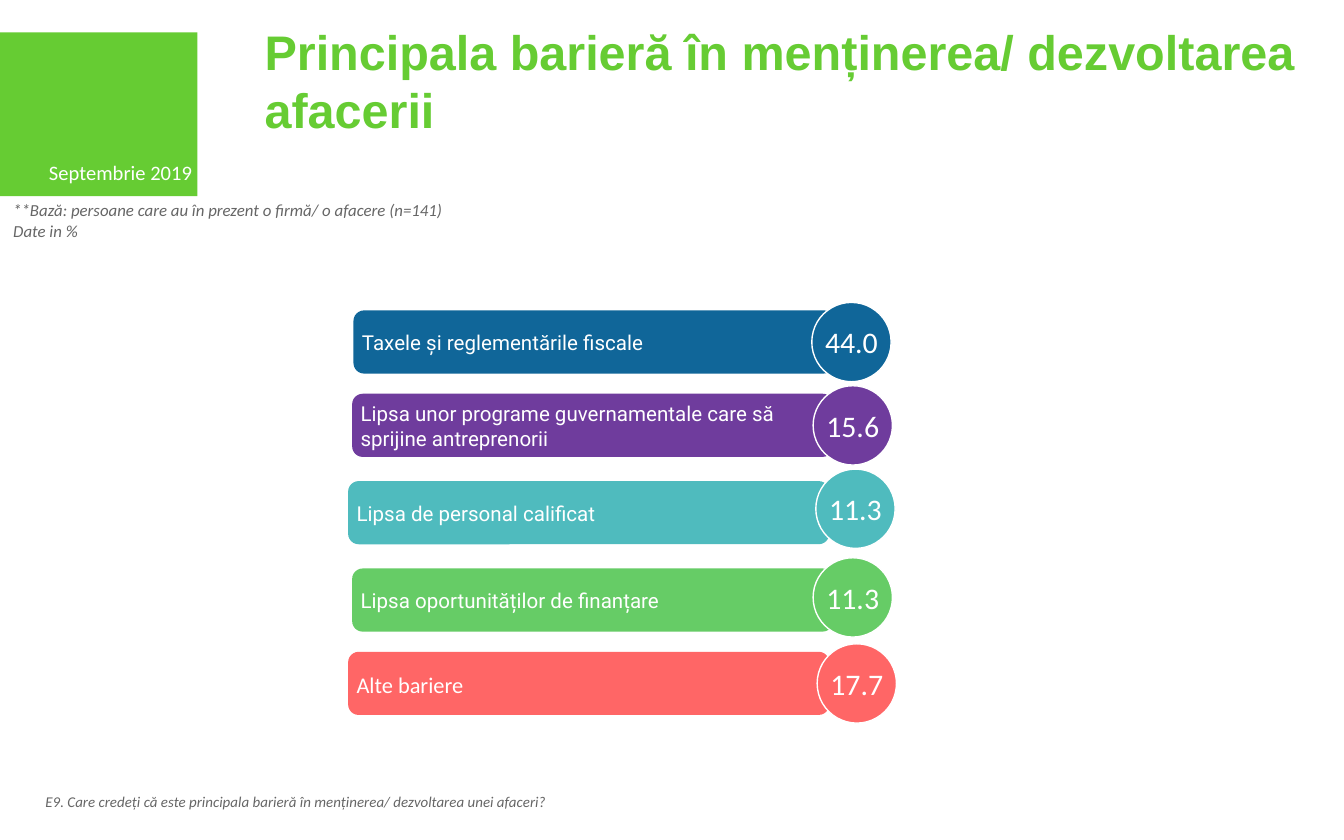
from pptx import Presentation
from pptx.dml.color import RGBColor
from pptx.enum import shapes, text
from pptx.util import Inches, Pt

WHITE, GREEN, GREY = "FFFFFF", "66CC33", "666666"
BAR_WIDTH, BAR_HEIGHT, CIRCLE = 3.58, 0.47, 0.59

# label, value, colour, bar left, bar top, circle left, circle top, size, font
BARRIERS = [
    ("Taxele și reglementările fiscale", "44.0", "106699",
     2.63, 2.31, 6.04, 2.25, 11, "Roboto"),
    ("Lipsa unor programe guvernamentale care să sprijine antreprenorii", "15.6", "6F3C9D",
     2.62, 2.93, 6.05, 2.87, 11, "Roboto"),
    ("Lipsa de personal calificat", "11.3", "4FBBBE",
     2.59, 3.58, 6.07, 3.49, 11, "Roboto"),
    ("Lipsa oportunităților de finanțare", "11.3", "66CC66",
     2.62, 4.23, 6.05, 4.15, 11, "Roboto"),
    ("Alte bariere", "17.7", "FF6666",
     2.59, 4.85, 6.08, 4.79, 12, "Calibri"),
]


def rgb(value):
    return RGBColor.from_string(value)


def write(holder, words, size=11, font="Calibri", color=WHITE, bold=False,
          italic=False, align=text.PP_ALIGN.LEFT, anchor=text.MSO_ANCHOR.TOP,
          insets=(0.1, 0.05, 0.1, 0.05), wrap=True):
    frame = holder.text_frame
    frame.word_wrap = wrap
    frame.vertical_anchor = anchor
    (frame.margin_left, frame.margin_top,
     frame.margin_right, frame.margin_bottom) = map(Inches, insets)
    frame.text = words
    for paragraph in frame.paragraphs:
        paragraph.alignment = align
        for run in paragraph.runs:
            run.font.size = Pt(size)
            run.font.name = font
            run.font.bold = bold
            run.font.italic = italic
            run.font.color.rgb = rgb(color)


def add_text(slide, box, words, **style):
    write(slide.shapes.add_textbox(*map(Inches, box)), words, **style)


def add_block(slide, kind, box, fill, outline=None):
    block = slide.shapes.add_shape(kind, *map(Inches, box))
    block.shadow.inherit = False
    block.fill.solid()
    block.fill.fore_color.rgb = rgb(fill)
    if outline:
        block.line.color.rgb = rgb(outline)
        block.line.width = Pt(0.75)
    else:
        block.line.fill.background()
    return block


def add_barrier(slide, label, value, color, bar_left, bar_top,
                circle_left, circle_top, size, font):
    bar = add_block(slide, shapes.MSO_SHAPE.ROUNDED_RECTANGLE,
                    (bar_left, bar_top, BAR_WIDTH, BAR_HEIGHT), color)
    write(bar, label, size=size, font=font, anchor=text.MSO_ANCHOR.MIDDLE,
          insets=(0.04, 0.02, 0.04, 0.01))
    circle = add_block(slide, shapes.MSO_SHAPE.OVAL,
                       (circle_left, circle_top, CIRCLE, CIRCLE), color, WHITE)
    write(circle, value, size=16, align=text.PP_ALIGN.CENTER,
          anchor=text.MSO_ANCHOR.MIDDLE, insets=(0, 0, 0, 0))


def main():
    deck = Presentation()
    deck.slide_width, deck.slide_height = Inches(10), Inches(6.25)
    slide = deck.slides.add_slide(deck.slide_layouts[6])

    # Date block
    add_block(slide, shapes.MSO_SHAPE.RECTANGLE, (0, 0.24, 1.47, 1.22), GREEN)
    add_text(slide, (0.14, 1.19, 1.29, 0.19), "Septembrie 2019",
             align=text.PP_ALIGN.RIGHT, insets=(0, 0, 0, 0))

    # Title
    add_text(slide, (1.87, 0.46, 7.95, 0.62),
             "Principala barieră în menținerea/ dezvoltarea afacerii",
             size=26, font="Arial", color=GREEN, bold=True,
             anchor=text.MSO_ANCHOR.BOTTOM)

    # Sample base and survey question
    add_text(slide, (0, 1.44, 3.68, 0.4),
             "**Bază: persoane care au în prezent o firmă/ o afacere (n=141)\nDate in %",
             size=9, color=GREY, italic=True)
    add_text(slide, (0.24, 5.85, 4.03, 0.24),
             "E9. Care credeți că este principala barieră în menținerea/ dezvoltarea unei afaceri?",
             size=8, color=GREY, italic=True, wrap=False)

    # Barriers with their shares
    for barrier in BARRIERS:
        add_barrier(slide, *barrier)

    deck.save("out.pptx")


if __name__ == "__main__":
    main()
